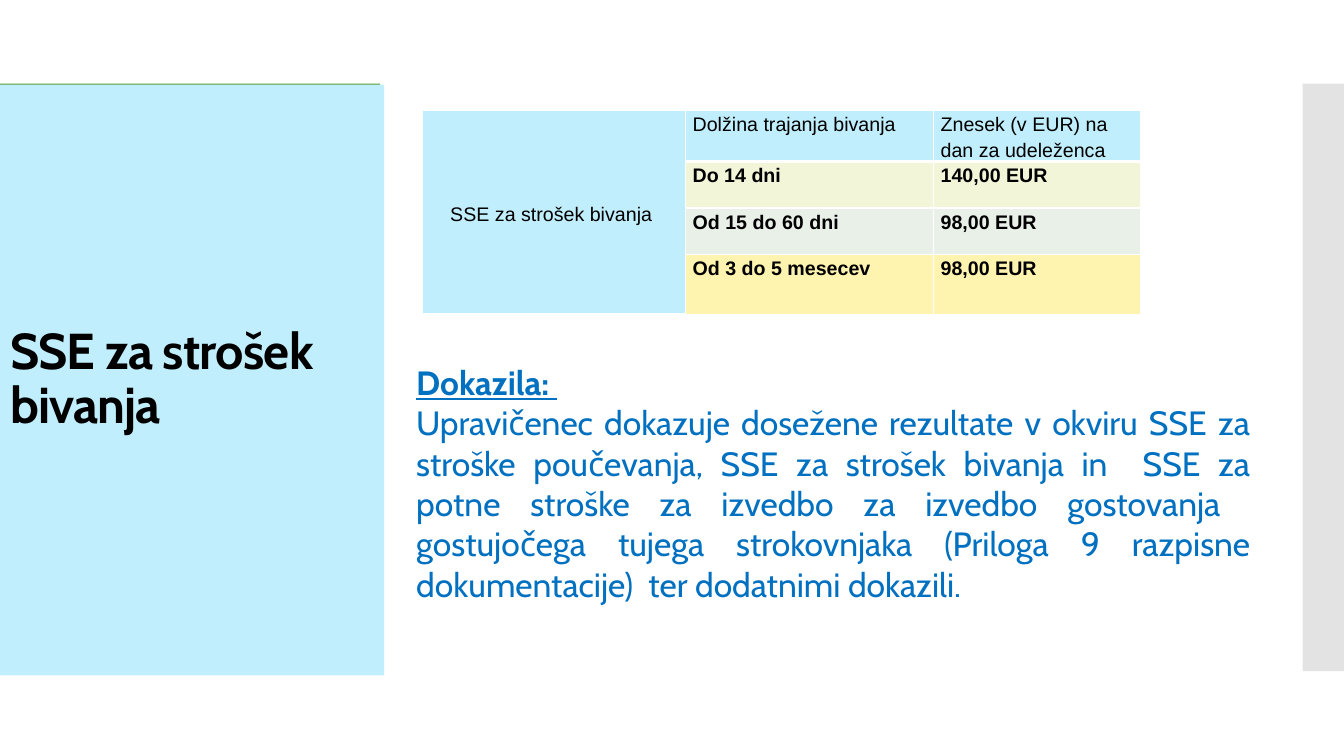
from lxml.etree import SubElement as Sub
from pptx import Presentation
from pptx.dml.color import RGBColor
from pptx.enum.shapes import MSO_SHAPE as Shape
from pptx.enum.text import MSO_ANCHOR as Anchor, MSO_AUTO_SIZE as Fit, PP_ALIGN as Align
from pptx.oxml.ns import qn
from pptx.util import Pt

PX = 9144
SIZE = (1333, 750)
TITLE = "SSE za strošek bivanja"
PANELS = [((0, 83, 377, 583), "549E39", 100), ((1292, 83, 42, 583), "C8C8C8", 50)]
SKY, BLACK, BLUE, WHITE = "C1EEFC", "000000", "0070C0", "FFFFFF"
COLS = [261, 246, 205]
ROWS = [
    (48, SKY, ["SSE za strošek bivanja ", "Dolžina trajanja bivanja", "Znesek (v EUR) na dan za udeleženca"]),
    (46, "F2F5D8", ["", "Do 14 dni", "140,00 EUR"]),
    (46, "E9F0E8", ["", "Od 15 do 60 dni", "98,00 EUR"]),
    (60, "FFF4AF", ["", "Od 3 do 5 mesecev", "98,00 EUR"]),
]
PROOF = [
    "Dokazila: ",
    "Upravičenec dokazuje dosežene rezultate v okviru SSE za stroške poučevanja, "
    "SSE za strošek bivanja in  SSE za potne stroške za izvedbo za izvedbo gostovanja  "
    "gostujočega tujega strokovnjaka (Priloga 9 razpisne dokumentacije)  ter dodatnimi dokazili. ",
]


def px(*nums):
    return [round(n * PX) for n in nums]


def paint(fill, color):
    fill.solid()
    fill.fore_color.rgb = RGBColor.from_string(color)


def style(para, font, size, color, bold=False, line=False):
    for run in para.runs:
        face = run.font
        face.name, face.size, face.bold, face.underline = font, Pt(size), bold, line
        face.color.rgb = RGBColor.from_string(color)


def add_panel(slide, box, color, alpha):
    panel = slide.shapes.add_shape(Shape.RECTANGLE, *px(*box))
    panel.shadow.inherit = False
    panel.line.fill.background()
    paint(panel.fill, color)
    if alpha < 100:
        tint = panel.fill._xPr.find(".//" + qn("a:srgbClr"))
        Sub(tint, qn("a:alpha"), val=str(alpha * 1000))


def set_title(slide):
    title = slide.shapes.title
    title.element.getparent().append(title.element)
    title.left, title.top, title.width, title.height = px(0, 84, 381, 586)
    paint(title.fill, SKY)
    frame = title.text_frame
    frame.text, frame.word_wrap = TITLE, True
    frame.auto_size, frame.vertical_anchor = Fit.NONE, Anchor.MIDDLE
    para = frame.paragraphs[0]
    para.alignment, para.line_spacing = Align.LEFT, 0.9
    style(para, "Cabin", 36, BLACK, True)
    for run in para.runs:
        run.font._element.set("spc", "-60")


def add_edges(cell, head):
    props = cell._tc.get_or_add_tcPr()
    for side in "LRTB":
        width = Pt(3 if head and side == "B" else 1)
        line = Sub(props, qn("a:ln" + side), w=str(width))
        Sub(Sub(line, qn("a:solidFill")), qn("a:srgbClr"), val=WHITE)


def add_rates(slide):
    high = sum(row[0] for row in ROWS)
    box = px(419, 110, sum(COLS), high)
    grid = slide.shapes.add_table(len(ROWS), len(COLS), *box).table
    for col, wide in zip(grid.columns, COLS):
        col.width = wide * PX
    for r, (tall, color, texts) in enumerate(ROWS):
        grid.rows[r].height = tall * PX
        for c, text in enumerate(texts):
            cell = grid.cell(r, c)
            cell.margin_left, cell.margin_right = px(7, 7)
            cell.margin_top = cell.margin_bottom = 0
            add_edges(cell, r == 0)
            paint(cell.fill, color if c else SKY)
            cell.text = text
            para = cell.text_frame.paragraphs[0]
            para.line_spacing = 1.15
            style(para, "Arial", 14, BLACK, r > 0)
    label = grid.cell(0, 0)
    label.merge(grid.cell(len(ROWS) - 1, 0))
    label.vertical_anchor = Anchor.MIDDLE
    label.text_frame.paragraphs[0].alignment = Align.CENTER


def add_proof(slide):
    frame = slide.shapes.add_textbox(*px(403, 354, 847, 252)).text_frame
    frame.word_wrap, frame.auto_size = True, Fit.SHAPE_TO_FIT_TEXT
    frame.text = "\n".join(PROOF)
    head, body = frame.paragraphs
    style(head, "Cabin", 24, BLUE, True, True)
    style(body, "Cabin", 24, BLUE)
    body.alignment = Align.JUSTIFY


def main():
    """Build the slide on daily living cost rates."""
    deck = Presentation()
    deck.slide_width, deck.slide_height = px(*SIZE)
    slide = deck.slides.add_slide(deck.slide_layouts[5])
    for panel in PANELS:
        add_panel(slide, *panel)
    set_title(slide)
    add_rates(slide)
    add_proof(slide)
    deck.save("out.pptx")


if __name__ == "__main__":
    main()
